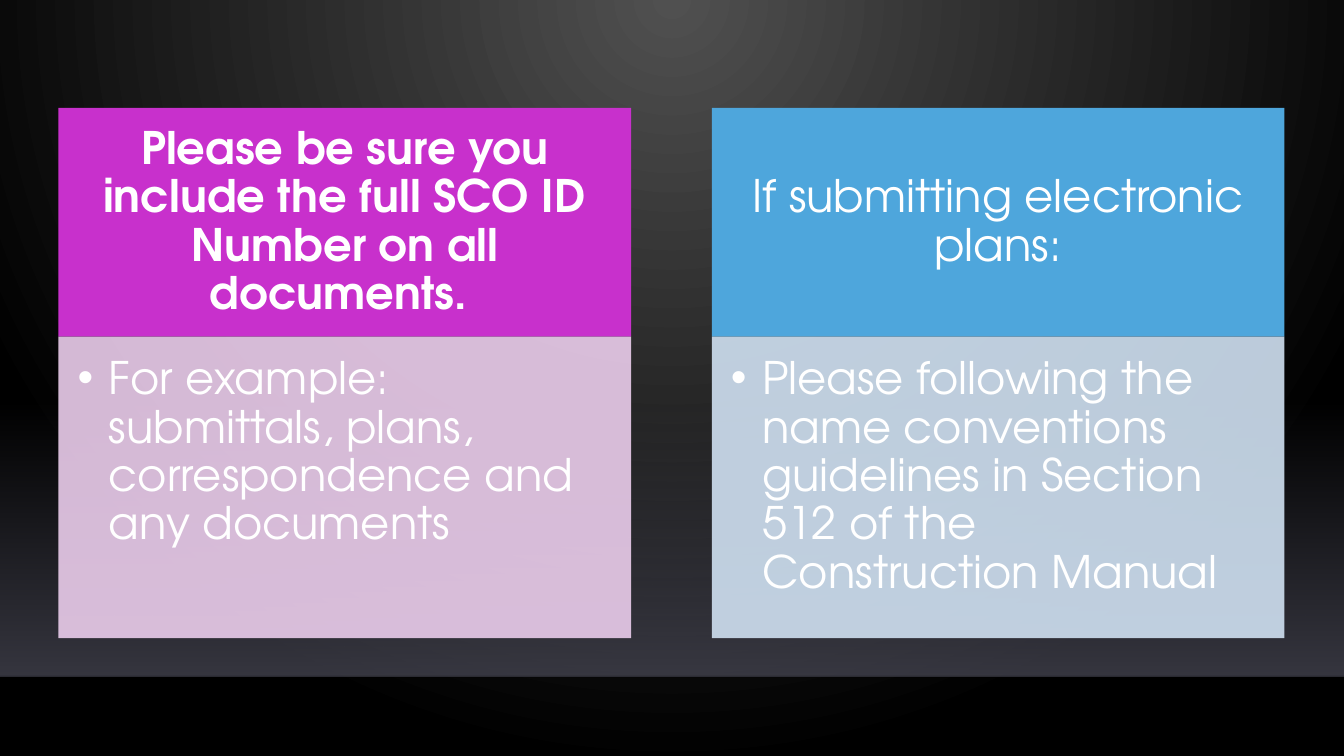
from lxml.etree import SubElement
from pptx import Presentation
from pptx.dml.color import RGBColor
from pptx.enum.shapes import MSO_CONNECTOR, MSO_SHAPE
from pptx.enum.text import MSO_ANCHOR, MSO_AUTO_SIZE, PP_ALIGN
from pptx.oxml import parse_xml
from pptx.oxml.ns import nsdecls, qn
from pptx.util import Inches, Pt

FONT = "TeX Gyre Adventor"
COLORS = {
    "glow": "505050", "black": "000000", "floor": "454551", "edge": "000001",
    "text": "FFFFFF", "magenta": "C830CC", "pink": "EBCDEC",
    "blue": "4EA6DC", "pale_blue": "D0E1F2",
}
SLIDE_W, SLIDE_H = 13.33, 7.5
CARD_W, CARD_H, CARD_PITCH = 5.68, 5.26, 6.48
HEADING_H = 2.27

# heading, bold heading, detail, heading fill, detail fill
CARDS = [
    ("Please be sure you include the full SCO ID Number on all documents. ", True,
     "For example: submittals, plans, correspondence and any documents",
     "magenta", "pink"),
    ("If submitting electronic plans:", False,
     "Please following the name conventions guidelines in Section 512 of the "
     "Construction Manual",
     "blue", "pale_blue"),
]


def set_alpha(color_parent, percent):
    """Make the colour inside the given fill element translucent."""
    SubElement(color_parent.find(qn("a:srgbClr")), qn("a:alpha"),
               val=str(percent * 1000))


def gradient(stops, direction):
    """Return a gradient fill; each stop is (position, colour, opacity)."""
    marks = "".join(
        f'<a:gs pos="{pos * 1000}"><a:srgbClr val="{COLORS[color]}">'
        f'<a:alpha val="{alpha * 1000}"/></a:srgbClr></a:gs>'
        for pos, color, alpha in stops)
    return parse_xml(f'<a:gradFill {nsdecls("a")} rotWithShape="1">'
                     f'<a:gsLst>{marks}</a:gsLst>{direction}</a:gradFill>')


def replace_fill(fill_owner, new_fill):
    old_fill = fill_owner.find(qn("a:solidFill"))
    fill_owner.replace(old_fill, new_fill)


def write_text(holder, text, *, bold=False, align=PP_ALIGN.LEFT,
               anchor=MSO_ANCHOR.TOP, margins, bullet=False):
    """Write one paragraph; margins are left, top, right, bottom."""
    frame = holder.text_frame
    frame.word_wrap = True
    frame.auto_size = MSO_AUTO_SIZE.NONE
    frame.vertical_anchor = anchor
    (frame.margin_left, frame.margin_top,
     frame.margin_right, frame.margin_bottom) = map(Inches, margins)
    frame.text = text
    paragraph = frame.paragraphs[0]
    properties = paragraph.alignment = align
    properties = paragraph._p.get_or_add_pPr()
    indent = Inches(0.31) if bullet else 0
    properties.set("marL", str(indent))
    properties.set("indent", str(-indent))
    if bullet:
        SubElement(properties, qn("a:buFont"), typeface="Arial")
        SubElement(properties, qn("a:buChar"), char="•")
    else:
        SubElement(properties, qn("a:buNone"))
    paragraph.line_spacing = 0.9
    paragraph.space_before = Pt(0)
    font = paragraph.runs[0].font
    font.name, font.size, font.bold = FONT, Pt(32), bold
    font.color.rgb = RGBColor.from_string(COLORS["text"])


def place_panel(holder, left, top, width, height, color):
    holder.left, holder.top = Inches(left), Inches(top)
    holder.width, holder.height = Inches(width), Inches(height)
    holder.fill.solid()
    holder.fill.fore_color.rgb = RGBColor.from_string(COLORS[color])


def draw_backdrop(slide, left, top, width, height):
    # Spotlight from the top centre
    background = slide.background.fill
    background.solid()
    background.fore_color.rgb = RGBColor.from_string(COLORS["black"])
    replace_fill(
        slide.element.cSld.find(qn("p:bg")).find(qn("p:bgPr")),
        gradient([(0, "glow", 100), (100, "black", 100)],
                 '<a:path path="circle">'
                 '<a:fillToRect l="43000" t="0" r="43000" b="100000"/></a:path>'))

    # Floor fading in towards its lower edge
    floor = slide.shapes.add_shape(MSO_SHAPE.RECTANGLE, Inches(left), Inches(top),
                                   Inches(width), Inches(height))
    floor.shadow.inherit = False
    floor.line.fill.background()
    floor.fill.solid()
    replace_fill(floor.element.spPr,
                 gradient([(0, "floor", 0), (100, "floor", 80)],
                          '<a:lin ang="5400000" scaled="0"/>'))

    # Edge of the floor
    bottom = Inches(top + height)
    edge = slide.shapes.add_connector(MSO_CONNECTOR.STRAIGHT, Inches(left), bottom,
                                      Inches(left + width), bottom)
    edge.line.width = Pt(1)
    edge.line.color.rgb = RGBColor.from_string(COLORS["edge"])
    edge_properties = edge.element.spPr
    set_alpha(edge_properties.find(qn("a:ln")).find(qn("a:solidFill")), 20)
    SubElement(edge_properties, qn("a:effectLst"))

    # Send both behind the cards
    tree = floor.element.getparent()
    tree.insert(2, edge.element)
    tree.insert(2, floor.element)


def draw_card(heading, detail, card, left, top, width, height):
    heading_text, bold, detail_text, heading_color, detail_color = card
    place_panel(heading, left, top, width, HEADING_H, heading_color)
    write_text(heading, heading_text, bold=bold, align=PP_ALIGN.CENTER,
               anchor=MSO_ANCHOR.MIDDLE, margins=(0.25, 0.14, 0.25, 0.14))
    place_panel(detail, left, top + HEADING_H, width, height - HEADING_H,
                detail_color)
    set_alpha(detail.element.spPr.find(qn("a:solidFill")), 90)
    write_text(detail, detail_text, bullet=True, margins=(0.19, 0.19, 0.25, 0.28))


def main():
    presentation = Presentation()
    presentation.slide_width = Inches(SLIDE_W)
    presentation.slide_height = Inches(SLIDE_H)
    comparison = presentation.slide_layouts.get_by_name("Comparison")
    slide = presentation.slides.add_slide(comparison)
    title, *holders = slide.placeholders
    title.element.getparent().remove(title.element)

    draw_backdrop(slide, 0, 3.96, SLIDE_W, 2.75)
    for column, card in enumerate(CARDS):
        heading, detail = holders[2 * column:2 * column + 2]
        draw_card(heading, detail, card, 0.58 + column * CARD_PITCH, 1.07,
                  CARD_W, CARD_H)
    presentation.save("out.pptx")


if __name__ == "__main__":
    main()
